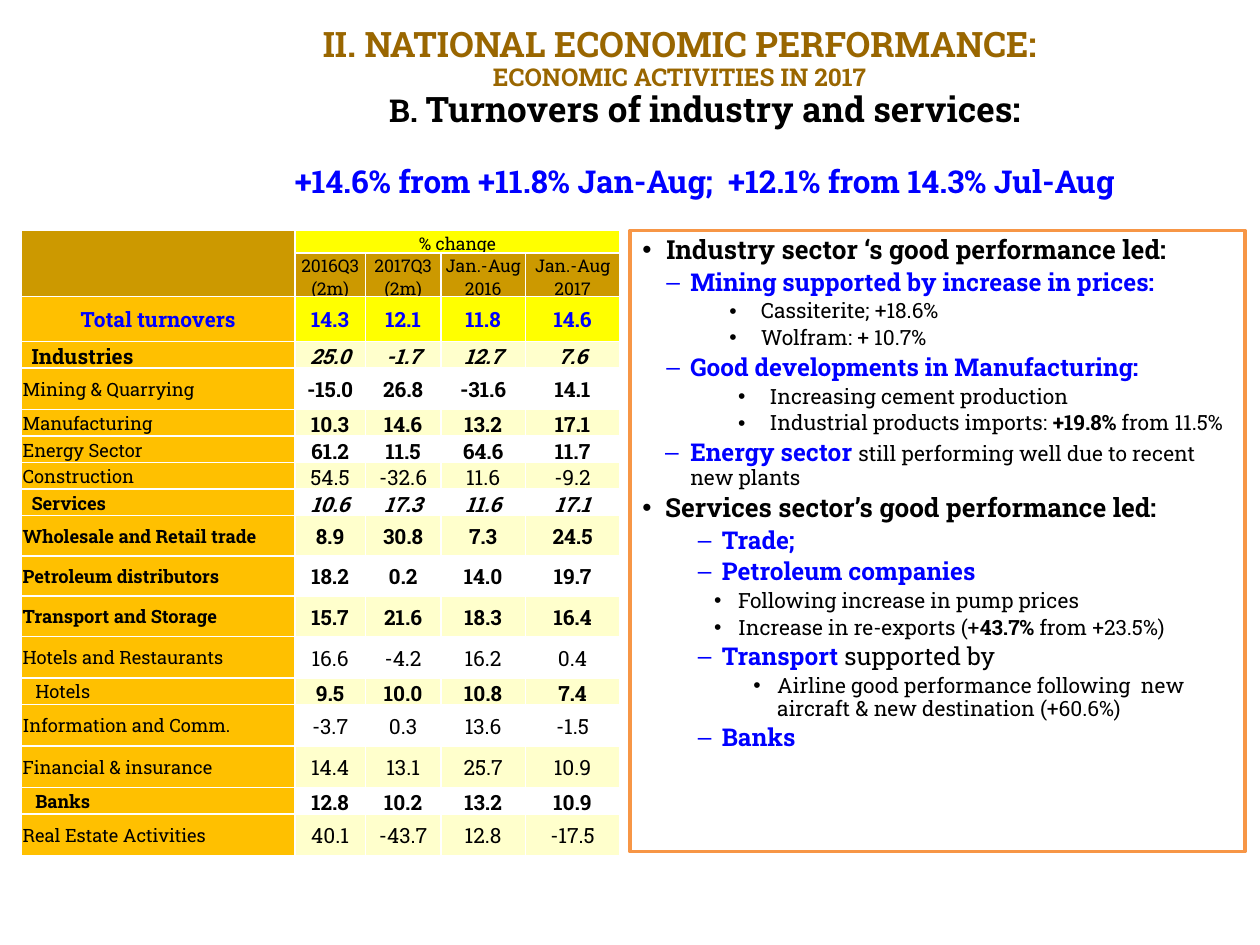
from lxml import etree
from pptx import Presentation
from pptx.dml.color import RGBColor
from pptx.enum.shapes import MSO_SHAPE as Shape
from pptx.enum.text import MSO_ANCHOR as Anchor, PP_ALIGN as Align
from pptx.oxml.ns import qn
from pptx.util import Inches, Pt

COLORS = {
    "black": "000000", "blue": "0000FF", "brown": "996600", "orange": "F79646",
    "ochre": "CC9900", "gold": "FFC000", "yellow": "FFFF00",
    "cream": "FFFFCC", "white": "FFFFFF",
}

# Text styles: size, colour, bold
TITLE, SUBTITLE = (20, "brown", True), (14, "brown", True)
LETTER, TOPIC_TITLE = (18, "black", True), (20, "black", True)
FIGURES = (18, "blue", True)
SECTOR, TOPIC, TOPIC_NOTE = (15, "black", True), (14, "blue", True), (14, "black", False)
DETAIL, STRONG = (12, "black", False), (12, "black", True)

# Left margin, space before, runs
TITLE_LINES = [
    (0, 0, [("II. NATIONAL ECONOMIC PERFORMANCE:", TITLE)]),
    (0, 0, [("ECONOMIC ACTIVITIES IN 2017", SUBTITLE)]),
    (0.4, 0, [("B. ", LETTER), ("Turnovers of industry and services:", TOPIC_TITLE)]),
    (0.4, 21, [("+14.6% from +11.8% Jan-Aug;  +12.1% from 14.3% Jul-Aug", FIGURES)]),
]

# Left margin, hanging indent, bullet, runs
COMMENTS = [
    (0.19, 0.19, "•", [("Industry sector ‘s good performance led:", SECTOR)]),
    (0.38, 0.19, "–", [("Mining supported by increase in prices:", TOPIC)]),
    (0.94, 0.25, "•", [("Cassiterite; +18.6%", DETAIL)]),
    (0.94, 0.25, "•", [("Wolfram: + 10.7%", DETAIL)]),
    (0.38, 0.19, "–", [("Good developments in Manufacturing:", TOPIC)]),
    (1.01, 0.25, "•", [("Increasing cement production", DETAIL)]),
    (1.01, 0.25, "•", [("Industrial products imports: ", DETAIL), ("+19.8% ", STRONG),
                       ("from 11.5%", DETAIL)]),
    (0.38, 0.2, "–", [("Energy sector ", TOPIC),
                      ("still performing well due to recent new plants", DETAIL)]),
    (0.18, 0.18, "•", [("Services sector’s good performance led:", SECTOR)]),
    (0.63, 0.19, "–", [("Trade;", TOPIC)]),
    (0.63, 0.19, "–", [("Petroleum companies", TOPIC)]),
    (0.76, 0.19, "•", [("Following increase in pump prices", DETAIL)]),
    (0.76, 0.19, "•", [("Increase in re-exports (+", DETAIL), ("43.7% ", STRONG),
                       ("from +23.5%)", DETAIL)]),
    (0.63, 0.19, "–", [("Transport ", TOPIC), ("supported by", TOPIC_NOTE)]),
    (1.07, 0.19, "•", [("Airline good performance following  new aircraft & new "
                        "destination (+60.6%)", DETAIL)]),
    (0.63, 0.19, "–", [("Banks", TOPIC)]),
]

COLUMN_WIDTHS = [2.17, 0.56, 0.6, 0.67, 0.75]
PERIODS = ["2016Q3 (2m)", "2017Q3 (2m)", "Jan.-Aug 2016", "Jan.-Aug 2017"]
TOTALS = ["14.3", "12.1", "11.8", "14.6"]
HEADER_HEIGHTS = [0.17, 0.33, 0.36]

# Label, indent, label size, label bold, values bold, values italic, row height, values
SECTOR_ROWS = [
    ("Industries", 0.07, 12, True, True, True, 0.2, "25.0 -1.7 12.7 7.6"),
    ("Mining & Quarrying", 0, 10.5, False, True, False, 0.33, "-15.0 26.8 -31.6 14.1"),
    ("Manufacturing", 0, 10.5, False, True, False, 0.2, "10.3 14.6 13.2 17.1"),
    ("Energy Sector", 0, 10.5, False, True, False, 0.2, "61.2 11.5 64.6 11.7"),
    ("Construction", 0, 10.5, False, False, False, 0.2, "54.5 -32.6 11.6 -9.2"),
    ("Services", 0.07, 10.5, True, True, True, 0.2, "10.6 17.3 11.6 17.1"),
    ("Wholesale and Retail trade", 0, 10.5, True, True, False, 0.32, "8.9 30.8 7.3 24.5"),
    ("Petroleum distributors", 0, 10.5, True, True, False, 0.32, "18.2 0.2 14.0 19.7"),
    ("Transport and Storage", 0, 10.5, True, True, False, 0.32, "15.7 21.6 18.3 16.4"),
    ("Hotels and Restaurants", 0, 10.5, False, False, False, 0.33, "16.6 -4.2 16.2 0.4"),
    ("Hotels", 0.1, 10.5, False, True, False, 0.2, "9.5 10.0 10.8 7.4"),
    ("Information and Comm.", 0, 10.5, False, False, False, 0.33, "-3.7 0.3 13.6 -1.5"),
    ("Financial & insurance", 0, 10.5, False, False, False, 0.33, "14.4 13.1 25.7 10.9"),
    ("Banks", 0.1, 10.5, True, True, False, 0.2, "12.8 10.2 13.2 10.9"),
    ("Real Estate Activities", 0, 10.5, False, False, False, 0.33, "40.1 -43.7 12.8 -17.5"),
]


def rgb(name):
    return RGBColor.from_string(COLORS[name])


class SlideBuilder:
    def __init__(self, slide, font_name="Roboto Slab"):
        self.slide = slide
        self.font_name = font_name

    def add_run(self, paragraph, text, style, italic=False):
        size, color, bold = style
        run = paragraph.add_run()
        run.text = text
        run.font.name = self.font_name
        run.font.size = Pt(size)
        run.font.bold = bold
        run.font.italic = italic
        run.font.color.rgb = rgb(color)

    def add_paragraph(self, frame, index, runs, margin, hanging=0, bullet=None,
                      align=Align.LEFT, space_before=0):
        paragraph = frame.add_paragraph() if index else frame.paragraphs[0]
        properties = paragraph._p.get_or_add_pPr()
        properties.set("marL", str(Inches(margin)))
        properties.set("indent", str(-Inches(hanging)))
        if bullet:
            etree.SubElement(properties, qn("a:buFont"), typeface="Arial")
            etree.SubElement(properties, qn("a:buChar"), char=bullet)
        paragraph.alignment = align
        paragraph.line_spacing = 0.9
        if index:
            paragraph.space_before = Pt(space_before)
        for text, style in runs:
            self.add_run(paragraph, text, style)

    def add_title(self, left, top, width, height):
        frame = self.slide.shapes.add_textbox(
            Inches(left), Inches(top), Inches(width), Inches(height)).text_frame
        frame.word_wrap = True
        for index, (margin, space, runs) in enumerate(TITLE_LINES):
            self.add_paragraph(frame, index, runs, margin, align=Align.CENTER,
                               space_before=space)

    def add_comments(self, left, top, width, height):
        shape = self.slide.shapes.add_shape(
            Shape.RECTANGLE, Inches(left), Inches(top), Inches(width), Inches(height))
        shape.shadow.inherit = False
        shape.fill.solid()
        shape.fill.fore_color.rgb = rgb("white")
        shape.line.color.rgb = rgb("orange")
        shape.line.width = Pt(2)
        frame = shape.text_frame
        frame.word_wrap = True
        frame.vertical_anchor = Anchor.TOP
        for index, (margin, hanging, bullet, runs) in enumerate(COMMENTS):
            first_size = runs[0][1][0]
            self.add_paragraph(frame, index, runs, margin, hanging, bullet,
                               space_before=0.2 * first_size)

    def fill_cell(self, cell, text, fill, style=(10, "black", False), italic=False,
                  align=Align.CENTER, indent=0):
        cell.margin_left = Inches(0.01 + indent)
        cell.margin_right = cell.margin_top = Inches(0.01)
        cell.margin_bottom = 0
        cell.vertical_anchor = Anchor.MIDDLE
        cell.fill.solid()
        cell.fill.fore_color.rgb = rgb(fill)
        for position, side in enumerate(("a:lnL", "a:lnR", "a:lnT", "a:lnB")):
            border = etree.Element(qn(side), w=str(Pt(1)))
            solid = etree.SubElement(border, qn("a:solidFill"))
            etree.SubElement(solid, qn("a:srgbClr"), val=COLORS["white"])
            cell._tc.get_or_add_tcPr().insert(position, border)
        paragraph = cell.text_frame.paragraphs[0]
        paragraph.alignment = align
        if text:
            self.add_run(paragraph, text, style, italic)
        else:
            etree.SubElement(paragraph._p, qn("a:endParaRPr"), sz="1000")

    def add_turnover_table(self, left, top, width, height):
        heights = HEADER_HEIGHTS + [row[6] for row in SECTOR_ROWS]
        graphic = self.slide.shapes.add_table(
            len(heights), len(COLUMN_WIDTHS),
            Inches(left), Inches(top), Inches(width), Inches(height))
        table = graphic.table
        table.first_row = table.horz_banding = False
        for column, column_width in zip(table.columns, COLUMN_WIDTHS):
            column.width = Inches(column_width)
        for row, row_height in zip(table.rows, heights):
            row.height = Inches(row_height)
        graphic.height = Inches(height)

        total_style = (12, "blue", True)
        headers = [
            (["", "% change", "", "", ""], "ochre", "yellow", (10, "black", False)),
            ([""] + PERIODS, "ochre", "ochre", (10, "black", False)),
            (["Total turnovers"] + TOTALS, "gold", "yellow", total_style),
        ]
        for row, (texts, label_fill, value_fill, style) in enumerate(headers):
            for column, text in enumerate(texts):
                fill = value_fill if column else label_fill
                self.fill_cell(table.cell(row, column), text, fill, style)
        table.cell(0, 0).merge(table.cell(1, 0))
        table.cell(0, 1).merge(table.cell(0, 4))

        for row, sector in enumerate(SECTOR_ROWS, len(headers)):
            label, indent, size, label_bold, value_bold, italic, _, values = sector
            self.fill_cell(table.cell(row, 0), label, "gold", (size, "black", label_bold),
                           align=Align.LEFT, indent=indent)
            fill = "cream" if row % 2 else "white"
            for column, value in enumerate(values.split(), 1):
                self.fill_cell(table.cell(row, column), value, fill,
                               (12, "black", value_bold), italic)


def main():
    presentation = Presentation()
    presentation.slide_width, presentation.slide_height = Inches(10), Inches(7.5)
    builder = SlideBuilder(presentation.slides.add_slide(presentation.slide_layouts[6]))
    builder.add_title(0.91, 0.17, 8.97, 1.62)
    builder.add_comments(5, 1.83, 4.88, 4.93)
    builder.add_turnover_table(0.17, 1.83, 4.75, 4.93)
    presentation.save("out.pptx")


if __name__ == "__main__":
    main()
